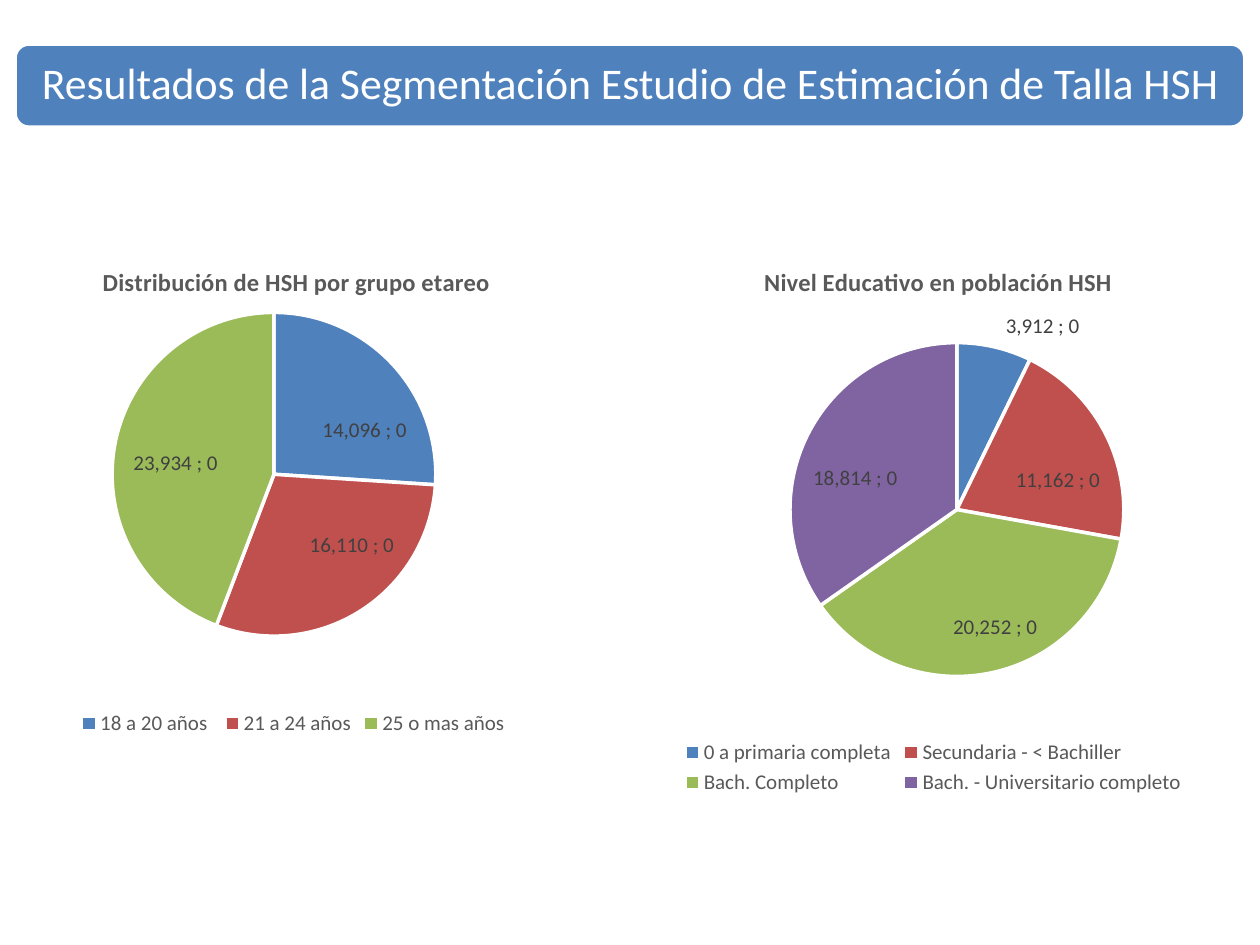
from lxml import etree
from pptx import Presentation
from pptx.chart.data import CategoryChartData
from pptx.dml.color import RGBColor
from pptx.enum.chart import XL_CHART_TYPE, XL_LABEL_POSITION, XL_LEGEND_POSITION
from pptx.enum.shapes import MSO_SHAPE
from pptx.enum.text import MSO_ANCHOR, PP_ALIGN
from pptx.oxml.ns import qn
from pptx.util import Inches, Pt

PIE = XL_CHART_TYPE.PIE
LABEL_CENTER = XL_LABEL_POSITION.CENTER
LEGEND_BOTTOM = XL_LEGEND_POSITION.BOTTOM
ROUNDED = MSO_SHAPE.ROUNDED_RECTANGLE
MIDDLE = MSO_ANCHOR.MIDDLE
CENTER = PP_ALIGN.CENTER

FONT = "Calibri"
NUMBER_FORMAT = "#,##0 "
COLORS = ["4F81BD", "C0504D", "9BBB59", "8064A2"]
HEADING = "Resultados de la Segmentación Estudio de Estimación de Talla HSH"
CHARTS = [
    {
        "title": "Distribución de HSH por grupo etareo",
        "box": (-0.2, 1.86, 5.06, 4.02),
        "title_at": (0.98, 0.21),
        "pie": (1.09, 0.62, 2.57),
        "slices": [
            ("18 a 20 años ", 14096, (0.27, 0.09)),
            ("21 a 24 años", 16110, (0.29, 0.02)),
            ("25 o mas años", 23934, (-0.13, 0.03)),
        ],
    },
    {
        "title": "Nivel Educativo en población HSH",
        "box": (4.91, 1.86, 5, 4.49),
        "title_at": (1.12, 0.21),
        "pie": (1.36, 0.86, 2.65),
        "slices": [
            ("0 a primaria completa", 3912, (0.55, -0.81)),
            ("Secundaria - < Bachiller", 11162, (0.23, 0.07)),
            ("Bach. Completo", 20252, (0.18, 0.29)),
            ("Bach. - Universitario completo", 18814, (-0.2, 0.06)),
        ],
    },
]


def rgb(value):
    return RGBColor.from_string(value)


def style_font(font, size, color, bold=False):
    font.name = FONT
    font.size = Pt(size)
    font.bold = bold
    font.color.rgb = rgb(color)


def write(tf, text, size, color, bold=False, spacing=None):
    p = tf.paragraphs[0]
    p.alignment = CENTER
    p.line_spacing = spacing
    r = p.add_run()
    r.text = text
    style_font(r.font, size, color, bold)


def make_layout(**values):
    layout = etree.Element(qn("c:layout"))
    manual = etree.SubElement(layout, qn("c:manualLayout"))
    for tag, value in values.items():
        etree.SubElement(manual, qn(f"c:{tag}")).set("val", str(value))
    return layout


def add_header(slide):
    sp = slide.shapes.add_shape(ROUNDED, Inches(0.12), Inches(0.35), Inches(9.76), Inches(0.66))
    sp.shadow.inherit = False
    sp.fill.solid()
    sp.fill.fore_color.rgb = rgb(COLORS[0])
    sp.line.color.rgb = rgb("FFFFFF")
    sp.line.width = Pt(2)
    tf = sp.text_frame
    tf.word_wrap = True
    tf.vertical_anchor = MIDDLE
    write(tf, HEADING, 25, "FFFFFF", spacing=0.9)


def format_label(label, x, y):
    style_font(label.font, 12, "404040")
    label.position = LABEL_CENTER
    element = label._get_or_add_dLbl()
    element.find(qn("c:showPercent")).set("val", "1")
    number = etree.Element(qn("c:numFmt"), formatCode=NUMBER_FORMAT, sourceLinked="0")
    element.find(qn("c:idx")).addnext(number)
    number.addprevious(make_layout(x=x, y=y))
    separator = etree.SubElement(element, qn("c:separator"))
    separator.text = "; "


def add_pie(slide, item):
    left, top, width, height = item["box"]
    names, values, offsets = zip(*item["slices"])
    data = CategoryChartData(number_format=NUMBER_FORMAT)
    data.categories = names
    data.add_series("Series 1", values)
    frame = slide.shapes.add_chart(PIE, *map(Inches, item["box"]), data)
    chart = frame.chart
    style_font(chart.font, 10, "000000")

    chart.has_title = True
    write(chart.chart_title.text_frame, item["title"], 14, "595959", bold=True)
    x, y = item["title_at"]
    title = chart.chart_title._element
    for old in title.findall(qn("c:layout")):
        title.remove(old)
    title.find(qn("c:tx")).addnext(
        make_layout(xMode="edge", yMode="edge", x=x / width, y=y / height))

    chart.has_legend = True
    chart.legend.position = LEGEND_BOTTOM
    chart.legend.include_in_layout = False
    style_font(chart.legend.font, 12, "595959")

    x, y, size = item["pie"]
    area = chart._chartSpace.chart.plotArea
    for old in area.findall(qn("c:layout")):
        area.remove(old)
    area.insert(0, make_layout(layoutTarget="inner", xMode="edge", yMode="edge",
                               x=x / width, y=y / height, w=size / width, h=size / height))

    plot = chart.plots[0]
    plot.vary_by_categories = True
    series = plot.series[0]
    for i, (dx, dy) in enumerate(offsets):
        point = series.points[i]
        point.format.fill.solid()
        point.format.fill.fore_color.rgb = rgb(COLORS[i])
        point.format.line.color.rgb = rgb("FFFFFF")
        point.format.line.width = Pt(2)
        format_label(point.data_label, dx / width, dy / height)
    for leader in series._element.iter(qn("c:showLeaderLines")):
        leader.set("val", "0")


def main():
    prs = Presentation()
    prs.slide_width = Inches(10)
    prs.slide_height = Inches(7.5)
    slide = prs.slides.add_slide(prs.slide_layouts[6])
    add_header(slide)
    for item in CHARTS:
        add_pie(slide, item)
    prs.save("out.pptx")


if __name__ == "__main__":
    main()
